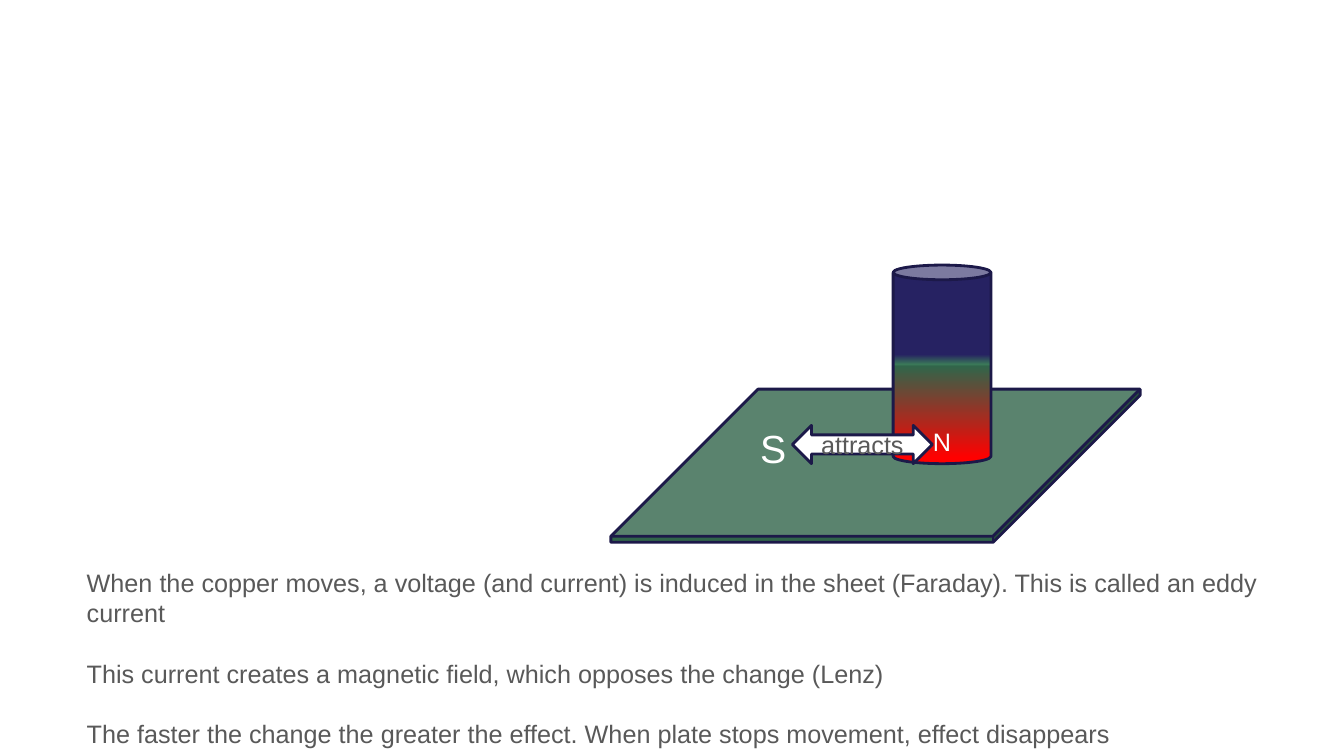
import dataclasses

import lxml.etree
import pptx
import pptx.dml.color
import pptx.enum.shapes
import pptx.enum.text
import pptx.oxml.ns
import pptx.util

COLOURS = {
    "copper": "31654A",
    "outline": "1C1949",
    "south": "262262",
    "middle": "3A7858",
    "north": "FF0000",
    "white": "FFFFFF",
    "grey": "595959",
}
FONT = "Arial"
LINE_HEIGHT = 1.2
SLIDE_WIDTH = pptx.util.Inches(13.33)
SLIDE_HEIGHT = pptx.util.Inches(7.5)
PRESETS = pptx.enum.shapes.MSO_SHAPE
ANCHORS = pptx.enum.text.MSO_ANCHOR
ALIGNMENTS = pptx.enum.text.PP_ALIGN


@dataclasses.dataclass(frozen=True)
class Area:
    """A rectangle in percent of the slide's width and height."""

    left: float
    top: float
    width: float
    height: float

    def lengths(self) -> tuple[int, int, int, int]:
        return (across(self.left), down(self.top), across(self.width), down(self.height))


@dataclasses.dataclass(frozen=True)
class Solid:
    preset: PRESETS
    area: Area
    fill: str
    adjustment: float


@dataclasses.dataclass(frozen=True)
class Stop:
    percent: int
    colour: str


PLATE = Solid(PRESETS.CUBE, Area(45.45, 51.47, 39.38, 20.27), "copper", 0.96)
MAGNET = Solid(PRESETS.CAN, Area(66.45, 35.07, 7.28, 26.27), "south", 0.15)
ATTRACTION = Solid(PRESETS.LEFT_RIGHT_ARROW, Area(58.95, 56.27, 10.43, 5.07), "white", 0.5)
SOUTH_LABEL = Area(55.8, 51.47, 11.93, 11.73)
EXPLANATION = Area(5.7, 74.4, 91.2, 21.6)

MAGNET_STOPS = [Stop(45, "south"), Stop(50, "middle"), Stop(51, "copper"), Stop(97, "north")]
EXPLANATION_TEXT = [
    "When the copper moves, a voltage (and current) is induced in the sheet (Faraday). "
    "This is called an eddy current",
    "This current creates a magnetic field, which opposes the change (Lenz)",
    "The faster the change the greater the effect. When plate stops movement, effect disappears",
]


def across(percent: float) -> int:
    return round(SLIDE_WIDTH * percent / 100)


def down(percent: float) -> int:
    return round(SLIDE_HEIGHT * percent / 100)


def colour(name: str) -> pptx.dml.color.RGBColor:
    return pptx.dml.color.RGBColor.from_string(COLOURS[name])


def add_solid(slide, solid: Solid):
    shape = slide.shapes.add_shape(solid.preset, *solid.area.lengths())
    shape.shadow.inherit = False
    shape.adjustments[0] = solid.adjustment
    shape.fill.solid()
    shape.fill.fore_color.rgb = colour(solid.fill)
    shape.line.color.rgb = colour("outline")
    shape.line.width = pptx.util.Pt(2)
    return shape


def fill_downward(shape, stops: list[Stop]) -> None:
    """Fill the shape with a gradient that runs from top to bottom."""
    shape.fill.gradient()
    shape.fill.gradient_angle = 270
    name = pptx.oxml.ns.qn
    stop_list = shape.element.spPr.find(".//" + name("a:gsLst"))
    for default_stop in list(stop_list):
        stop_list.remove(default_stop)
    for stop in stops:
        element = lxml.etree.SubElement(stop_list, name("a:gs"), pos=str(stop.percent * 1000))
        lxml.etree.SubElement(element, name("a:srgbClr"), val=COLOURS[stop.colour])


def write_text(shape, *paragraphs: str, size: float = 18, fill: str = "grey",
               alignment=ALIGNMENTS.LEFT, anchor=ANCHORS.TOP,
               top_inset: float = 0.67, bottom_inset: float = 0.67, gap: float = 0) -> None:
    """Write paragraphs; insets are percent of slide height, gap is in points."""
    frame = shape.text_frame
    frame.word_wrap = True
    frame.vertical_anchor = anchor
    frame.margin_left = frame.margin_right = across(0.75)
    frame.margin_top, frame.margin_bottom = down(top_inset), down(bottom_inset)
    for index, text in enumerate(paragraphs):
        paragraph = frame.add_paragraph() if index else frame.paragraphs[0]
        paragraph.alignment = alignment
        paragraph.line_spacing = pptx.util.Pt(size * LINE_HEIGHT)
        paragraph.space_before = pptx.util.Pt(gap if index else 0)
        run = paragraph.add_run()
        run.text = text
        run.font.name = FONT
        run.font.size = pptx.util.Pt(size)
        run.font.color.rgb = colour(fill)


def main() -> None:
    presentation = pptx.Presentation()
    presentation.slide_width, presentation.slide_height = SLIDE_WIDTH, SLIDE_HEIGHT
    slide = presentation.slides.add_slide(presentation.slide_layouts[6])

    add_solid(slide, PLATE)
    magnet = add_solid(slide, MAGNET)
    fill_downward(magnet, MAGNET_STOPS)
    write_text(magnet, "N", fill="white", alignment=ALIGNMENTS.CENTER,
               anchor=ANCHORS.BOTTOM, bottom_inset=0)

    south_label = slide.shapes.add_textbox(*SOUTH_LABEL.lengths())
    write_text(south_label, "S", size=28, fill="white", top_inset=4.67)
    explanation = slide.shapes.add_textbox(*EXPLANATION.lengths())
    write_text(explanation, *EXPLANATION_TEXT, gap=18 * LINE_HEIGHT)

    arrow = add_solid(slide, ATTRACTION)
    write_text(arrow, "attracts", alignment=ALIGNMENTS.CENTER, anchor=ANCHORS.MIDDLE)

    presentation.save("out.pptx")


if __name__ == "__main__":
    main()
